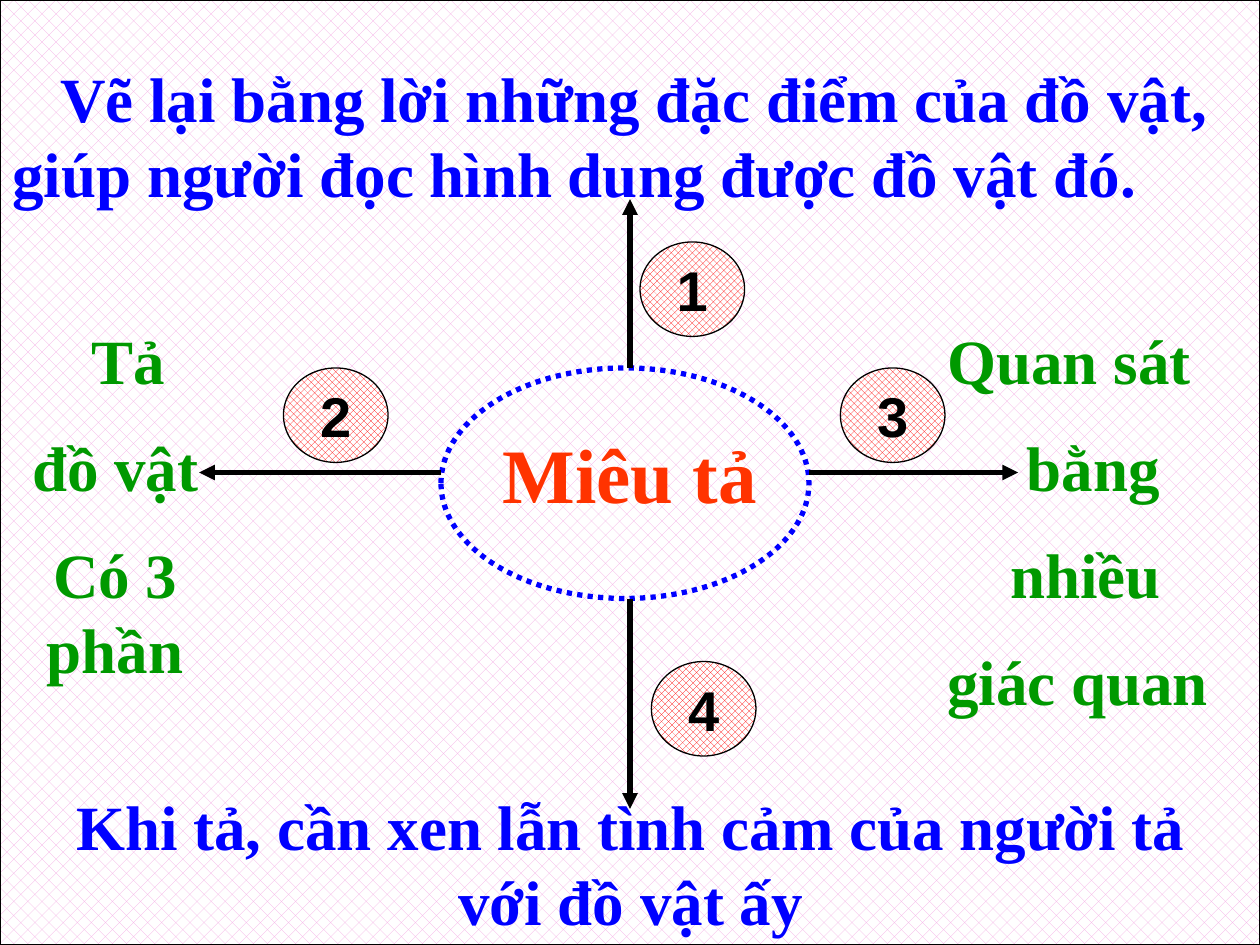
from lxml import etree
from pptx import Presentation
from pptx.dml.color import RGBColor
from pptx.enum.dml import MSO_LINE, MSO_PATTERN
from pptx.enum.shapes import MSO_CONNECTOR, MSO_SHAPE
from pptx.enum.text import MSO_ANCHOR, MSO_AUTO_SIZE, PP_ALIGN
from pptx.oxml.ns import qn
from pptx.util import Inches, Pt

SERIF = "Times New Roman"
BLACK, WHITE, RED, BLUE, GREEN = "000000", "FFFFFF", "FF0000", "0000FF", "009900"


def rgb(color):
    return RGBColor.from_string(color)


def add_run(paragraph, text, size, color, font=SERIF):
    run = paragraph.add_run()
    run.text = text
    run.font.name = font
    run.font.size = Pt(size)
    run.font.bold = True
    run.font.color.rgb = rgb(color)


prs = Presentation()
prs.slide_width, prs.slide_height = Inches(10), Inches(7.5)
slide = prs.slides.add_slide(prs.slide_layouts[6])
shapes = slide.shapes

# Patterned backdrop with the central topic, then the numbered badges
filled_shapes = [
    # preset, box, pattern, pattern colour, text, size, colour, font
    (MSO_SHAPE.RECTANGLE, (0, 0, 10, 7.5), MSO_PATTERN.PERCENT_25, "F5A9E5",
     "Miêu tả", 44, "FF3300", SERIF),
]
badge_corners = [(5.08, 1.92), (2.25, 2.92), (6.67, 2.92), (5.17, 5.25)]
for number, (left, top) in enumerate(badge_corners, 1):
    filled_shapes.append(
        (MSO_SHAPE.OVAL, (left, top, 0.83, 0.75), MSO_PATTERN.LARGE_CHECKER_BOARD, RED,
         str(number), 32, BLACK, "Arial"))

for preset, box, pattern, tint, text, size, color, font in filled_shapes:
    shape = shapes.add_shape(preset, *map(Inches, box))
    shape.shadow.inherit = False
    shape.fill.patterned()
    shape.fill.pattern = pattern
    shape.fill.fore_color.rgb = rgb(tint)
    shape.fill.back_color.rgb = rgb(WHITE)
    shape.line.color.rgb = rgb(BLACK)
    shape.line.width = Pt(0.75)
    frame = shape.text_frame
    frame.word_wrap = False
    frame.vertical_anchor = MSO_ANCHOR.MIDDLE
    frame.paragraphs[0].alignment = PP_ALIGN.CENTER
    add_run(frame.paragraphs[0], text, size, color, font)

# Dotted ring around the topic
ring = shapes.add_shape(MSO_SHAPE.OVAL, Inches(3.5), Inches(2.92), Inches(2.92), Inches(1.83))
ring.shadow.inherit = False
ring.fill.background()
ring.line.color.rgb = rgb(BLUE)
ring.line.width = Pt(3)
ring.line.dash_style = MSO_LINE.ROUND_DOT

# Arrows from the ring to the four ideas
for ends in [(5, 2.92, 5, 1.58), (5, 4.75, 5, 6.42),
             (6.42, 3.75, 8.08, 3.75), (3.5, 3.75, 1.58, 3.75)]:
    arrow = shapes.add_connector(MSO_CONNECTOR.STRAIGHT, *map(Inches, ends))
    arrow.line.color.rgb = rgb(BLACK)
    arrow.line.width = Pt(3)
    etree.SubElement(arrow.line._get_or_add_ln(), qn("a:tailEnd"), type="triangle")
    etree.SubElement(arrow._element.spPr, qn("a:effectLst"))

# The four ideas: box, colour, alignment, (first-line indent, text) per paragraph
ideas = [
    ((0, 0.42, 10, 1.3), BLUE, PP_ALIGN.LEFT,
     [(0.38, "Vẽ lại bằng lời những đặc điểm của đồ vật, "
             "giúp người đọc hình dung được đồ vật đó.")]),
    ((0, 2.5, 1.83, 3.1), GREEN, PP_ALIGN.CENTER,
     [(0.21, "Tả"), (0, "đồ vật"), (0, "Có 3 phần")]),
    ((7.42, 2.5, 3.08, 3.4), GREEN, PP_ALIGN.LEFT,
     [(0, "Quan sát"), (0.63, "bằng"), (0.5, "nhiều"), (0, "giác quan")]),
    ((0.42, 6.2, 9.17, 1.3), BLUE, PP_ALIGN.CENTER,
     [(0, "Khi tả, cần xen lẫn tình cảm của người tả với đồ vật ấy")]),
]
for box, color, alignment, lines in ideas:
    frame = shapes.add_textbox(*map(Inches, box)).text_frame
    frame.word_wrap = True
    frame.auto_size = MSO_AUTO_SIZE.SHAPE_TO_FIT_TEXT
    for index, (indent, text) in enumerate(lines):
        paragraph = frame.add_paragraph() if index else frame.paragraphs[0]
        paragraph.alignment = alignment
        paragraph.space_before = Pt(18)
        if indent:
            paragraph._p.get_or_add_pPr().set("indent", str(Inches(indent)))
        add_run(paragraph, text, 36, color)

prs.save("out.pptx")
